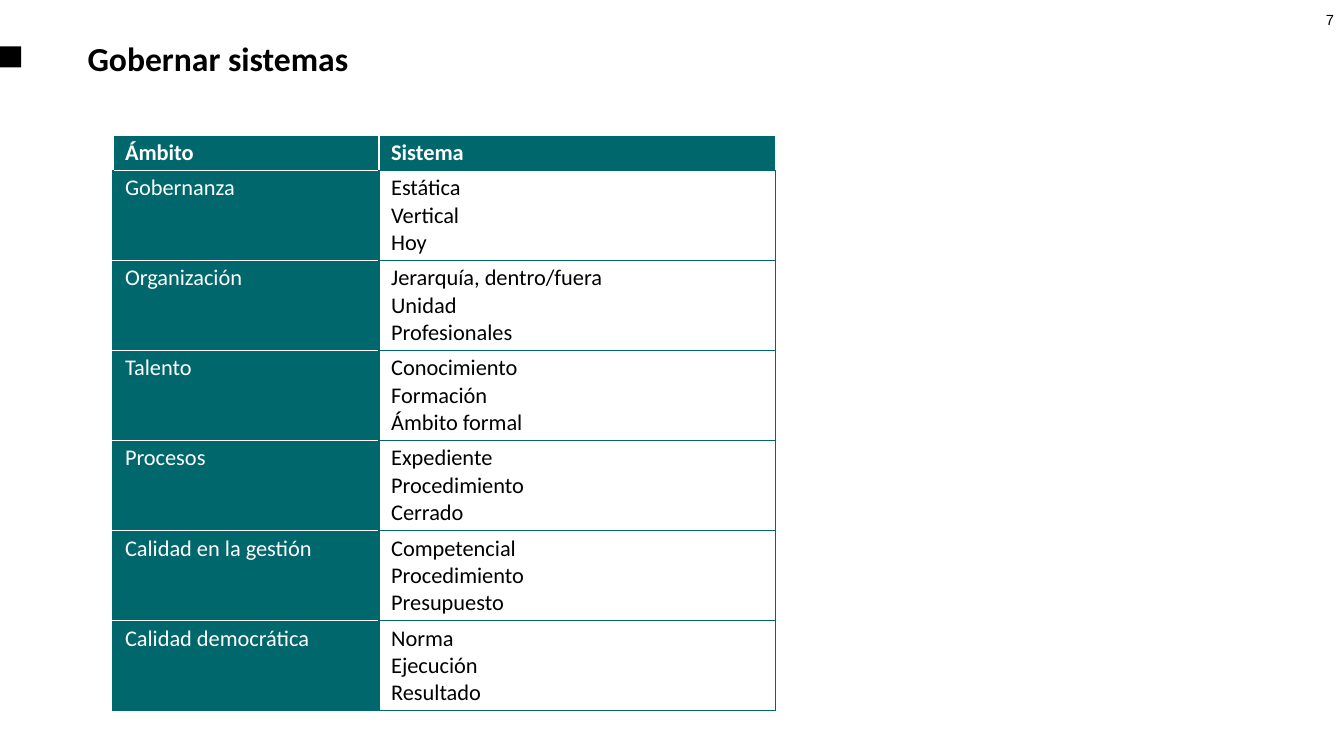
import pptx
import pptx.dml.color
import pptx.enum.shapes
import pptx.enum.text
import pptx.oxml
import pptx.oxml.ns
import pptx.util

Inches = pptx.util.Inches
Color = pptx.dml.color.RGBColor.from_string
Align = pptx.enum.text.PP_ALIGN
Anchor = pptx.enum.text.MSO_ANCHOR

theme = {
    "teal": "00676C", "white": "FFFFFF", "black": "000000",
    "body_font": "Calibri", "number_font": "Arial",
    "title_size": 24, "table_size": 16, "number_size": 10.5,
}

systems = {
    "Gobernanza": ["Estática", "Vertical", "Hoy"],
    "Organización": ["Jerarquía, dentro/fuera", "Unidad", "Profesionales"],
    "Talento": ["Conocimiento", "Formación", "Ámbito formal"],
    "Procesos": ["Expediente", "Procedimiento", "Cerrado"],
    "Calidad en la gestión": ["Competencial", "Procedimiento", "Presupuesto"],
    "Calidad democrática": ["Norma", "Ejecución", "Resultado"],
}


def write_lines(frame, lines, color, font, size, bold=False, align=Align.LEFT):
    for index, line in enumerate(lines):
        para = frame.paragraphs[0] if index == 0 else frame.add_paragraph()
        para.alignment = align
        span = para.add_run()
        span.text = line
        span.font.color.rgb = Color(theme[color])
        values = {"name": theme[font], "size": pptx.util.Pt(theme[size]), "bold": bold}
        for name, value in values.items():
            setattr(span.font, name, value)


def set_borders(cell, colors):
    properties = cell._tc.get_or_add_tcPr()
    for index, (side, color) in enumerate(colors.items()):
        border = pptx.oxml.parse_xml(
            f'<a:ln{side} {pptx.oxml.ns.nsdecls("a")} w="12700"><a:solidFill>'
            f'<a:srgbClr val="{theme[color]}"/></a:solidFill></a:ln{side}>'
        )
        properties.insert(index, border)


deck = pptx.Presentation()
deck.slide_width, deck.slide_height = Inches(13.33), Inches(7.5)
page = deck.slides.add_slide(deck.slide_layouts[6])

marker = page.shapes.add_shape(
    pptx.enum.shapes.MSO_SHAPE.RECTANGLE, 0, Inches(0.46), Inches(0.21), Inches(0.21)
)
marker.shadow.inherit = False
marker.fill.solid()
marker.fill.fore_color.rgb = Color(theme["black"])
marker.line.fill.background()

labels = [
    ("7", (12.79, 0.06, 0.54, 0.4), Anchor.TOP,
     {"font": "number_font", "size": "number_size", "align": Align.RIGHT}),
    ("Gobernar sistemas", (0.77, 0.25, 11.81, 0.66), Anchor.MIDDLE,
     {"font": "body_font", "size": "title_size", "bold": True}),
]
for text, place, anchor, style in labels:
    box = page.shapes.add_textbox(*map(Inches, place))
    box.text_frame.word_wrap = True
    box.text_frame.vertical_anchor = anchor
    write_lines(box.text_frame, [text], "black", **style)

header_height, row_height = 0.35, 0.894
column_widths = [2.64, 3.93]
rows = [(["Ámbito"], ["Sistema"])] + [([area], lines) for area, lines in systems.items()]
table = page.shapes.add_table(
    len(rows), len(column_widths), Inches(1.12), Inches(1.34),
    Inches(sum(column_widths)), Inches(header_height + row_height * len(systems))
).table
for column, width in zip(table.columns, column_widths):
    column.width = Inches(width)

margins = {"margin_left": 0.12, "margin_top": 0.04, "margin_right": 0.08, "margin_bottom": 0.04}
last = len(rows) - 1
for row, contents in enumerate(rows):
    header = row == 0
    table.rows[row].height = Inches(header_height if header else row_height)
    for column, lines in enumerate(contents):
        cell = table.cell(row, column)
        label = header or column == 0
        for name, value in margins.items():
            setattr(cell, name, Inches(value))
        cell.fill.solid()
        cell.fill.fore_color.rgb = Color(theme["teal" if label else "white"])
        write_lines(cell.text_frame, lines, "white" if label else "black",
                    "body_font", "table_size", bold=header)
        side = "white" if header else "teal"
        divider = "white" if column == 0 else "teal"
        set_borders(cell, {
            "L": side,
            "R": side,
            "T": "white" if header else divider,
            "B": "teal" if row == last else divider,
        })

deck.save("out.pptx")
